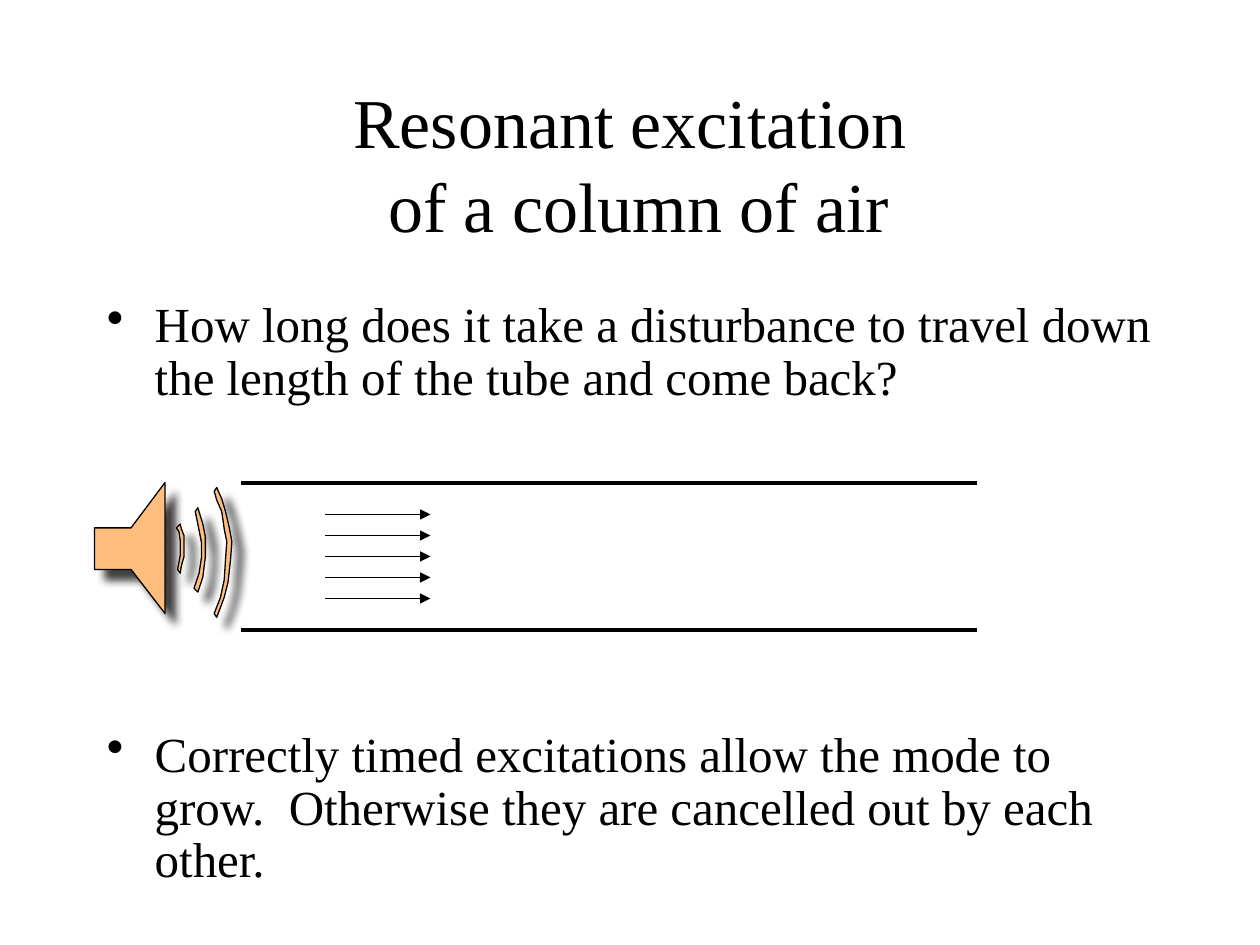
from dataclasses import dataclass

from lxml import etree
from pptx import Presentation
from pptx.dml.color import RGBColor
from pptx.enum.shapes import MSO_CONNECTOR
from pptx.enum.text import MSO_ANCHOR, PP_ALIGN
from pptx.oxml.ns import qn
from pptx.util import Emu, Inches, Pt

STRAIGHT = MSO_CONNECTOR.STRAIGHT
MIDDLE, TOP = MSO_ANCHOR.MIDDLE, MSO_ANCHOR.TOP
CENTER, LEFT = PP_ALIGN.CENTER, PP_ALIGN.LEFT
FONT, BLACK, ORANGE = "Times New Roman", "000000", "FFBE7D"
UNIT = Inches(1) // 12  # the slide is 120 columns by 90 rows
CENT = Inches(1) // 100  # speaker outlines are in hundredths of an inch
INDENT = Inches(0.38)


@dataclass
class Line:
    left: int
    right: int
    row: int
    width: float
    arrow: bool = False


@dataclass
class Bullet:
    text: str
    before: float


TUBE = [Line(23, 93, row, 2.5) for row in (46, 60)]
ARROWS = [Line(31, 41, row, 0.75, True) for row in range(49, 58, 2)]

BULLETS = [
    Bullet("How long does it take a disturbance to travel down the length "
           "of the tube and come back?", 5.6),
    Bullet("Correctly timed excitations allow the mode to grow.  Otherwise "
           "they are cancelled out by each other.", 185),
]

HORN = [(75, 419), (104, 419), (131, 383), (131, 487), (104, 452), (75, 452)]
WAVES = [
    [(140, 419), (143, 416), (144, 420), (146, 425), (146, 442), (144, 449),
     (143, 455), (141, 452), (143, 441), (143, 429), (142, 422)],
    [(157, 403), (161, 416), (163, 426), (163, 442), (161, 458), (157, 470),
     (154, 467), (158, 455), (160, 442), (160, 431), (157, 416), (155, 406)],
    [(170, 390), (172, 387), (176, 396), (179, 406), (182, 419), (184, 430),
     (183, 444), (181, 462), (178, 474), (172, 490), (170, 487), (175, 474),
     (178, 460), (179, 444), (180, 430), (178, 420), (176, 406), (172, 397)],
]


def color(code: str) -> RGBColor:
    return RGBColor.from_string(code)


def add_box(slide, left: int, top: int, wide: int, high: int, anchor):
    box = slide.shapes.add_textbox(left * UNIT, top * UNIT, wide * UNIT, high * UNIT)
    frame = box.text_frame
    frame.word_wrap = True
    frame.vertical_anchor = anchor
    return frame


def style(para, size: int, align) -> None:
    para.alignment = align
    for run in para.runs:
        run.font.name = FONT
        run.font.size = Pt(size)
        run.font.color.rgb = color(BLACK)


def add_bullets(frame, items: list[Bullet]) -> None:
    frame.text = "\n".join(item.text for item in items)
    for para, item in zip(frame.paragraphs, items):
        style(para, 28, LEFT)
        para.line_spacing = 0.9
        para.space_before = Pt(item.before)
        props = para._p.get_or_add_pPr()
        props.set("marL", str(INDENT))
        props.set("indent", str(-INDENT))
        etree.SubElement(props, qn("a:buChar"), char="•")


def add_line(group, item: Line) -> None:
    y = item.row * UNIT
    line = group.shapes.add_connector(STRAIGHT, item.left * UNIT, y, item.right * UNIT, y)
    line.line.color.rgb = color(BLACK)
    line.line.width = Pt(item.width)
    props = line._element.spPr
    if item.arrow:
        etree.SubElement(props.find(qn("a:ln")), qn("a:tailEnd"), type="triangle")
    etree.SubElement(props, qn("a:effectLst"))


def add_shadow(shape) -> None:
    shape.shadow.inherit = False
    effects = shape._element.spPr.find(qn("a:effectLst"))
    outer = etree.SubElement(effects, qn("a:outerShdw"), blurRad=str(Pt(5)),
                             dist=str(Pt(8.5)), dir=str(45 * 60000),
                             algn="ctr", rotWithShape="0")
    tint = etree.SubElement(outer, qn("a:srgbClr"), val=BLACK)
    etree.SubElement(tint, qn("a:alpha"), val="75000")


def add_speaker(slide) -> None:
    pen = slide.shapes.build_freeform(*HORN[0], scale=CENT)
    pen.add_line_segments(HORN[1:], close=True)
    for wave in WAVES:
        pen.move_to(*wave[0])
        pen.add_line_segments(wave[1:], close=True)
    shape = pen.convert_to_shape()
    shape.fill.solid()
    shape.fill.fore_color.rgb = color(ORANGE)
    shape.line.color.rgb = color(BLACK)
    shape.line.width = Pt(0.75)
    add_shadow(shape)


def main() -> None:
    deck = Presentation()
    deck.slide_width, deck.slide_height = Emu(120 * UNIT), Emu(90 * UNIT)
    slide = deck.slides.add_slide(deck.slide_layouts[6])

    title = add_box(slide, 9, 8, 102, 15, MIDDLE)
    title.text = "Resonant excitation\v of a column of air"
    style(title.paragraphs[0], 40, CENTER)
    add_bullets(add_box(slide, 9, 28, 102, 55, TOP), BULLETS)

    group = slide.shapes.add_group_shape()
    for item in TUBE + ARROWS:
        add_line(group, item)
    add_speaker(slide)
    deck.save("out.pptx")


if __name__ == "__main__":
    main()
